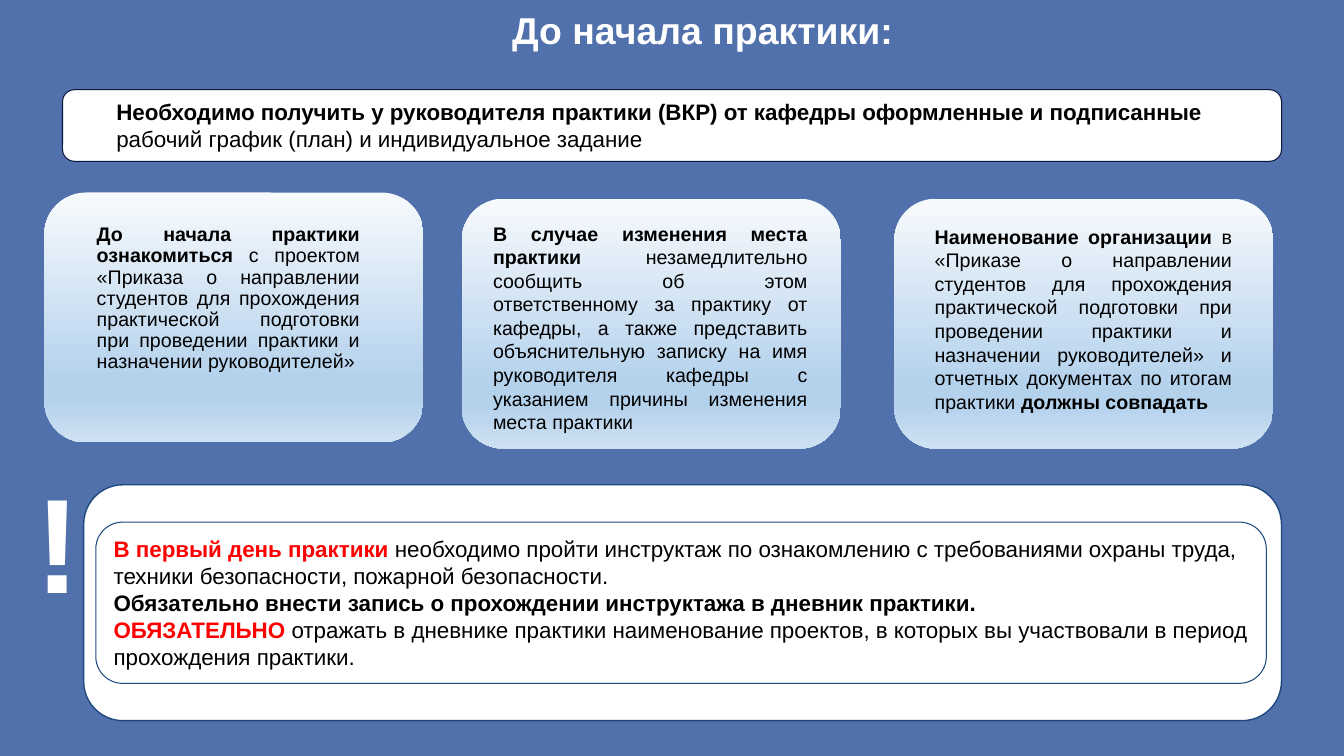
import pptx
import pptx.util
import pptx.dml.color
import pptx.enum.shapes
import pptx.enum.text
import pptx.oxml

PX = 9144  # EMU per px, 100 px to the inch
FONT = "Arial"
COLORS = {
    "back": "5171AC", "white": "FFFFFF", "black": "000000", "red": "FF0000",
    "navy": "0C153C", "blue": "1F497D",
}
CARD_STOPS = [(0, "F7FAFD"), (74, "B5D2EC"), (83, "B5D2EC"), (100, "CEE1F2")]
ALIGN = pptx.enum.text.PP_ALIGN
ANCHOR = pptx.enum.text.MSO_ANCHOR


def rgb(name):
    return pptx.dml.color.RGBColor.from_string(COLORS[name])


def px(*values):
    return [pptx.util.Emu(v * PX) for v in values]


def write(tf, paragraphs, size, align=ALIGN.LEFT, anchor=ANCHOR.TOP,
          inset=None, spacing=None, before=0, indent=0, wrap=True):
    """Each paragraph is a list of (text, colour name, bold) runs."""
    tf.word_wrap = wrap
    tf.auto_size = pptx.enum.text.MSO_AUTO_SIZE.NONE
    tf.vertical_anchor = anchor
    if inset is not None:
        (tf.margin_left, tf.margin_top,
         tf.margin_right, tf.margin_bottom) = px(*[inset] * 4)
    for i, runs in enumerate(paragraphs):
        p = tf.add_paragraph() if i else tf.paragraphs[0]
        p.alignment = align
        p.space_before = pptx.util.Pt(before)
        if spacing:
            p.line_spacing = spacing
        if indent:
            p.level = 1
            pPr = p._p.get_or_add_pPr()
            pPr.set("marL", str(indent * PX))
            pPr.set("indent", "0")
        for text, color, bold in runs:
            r = p.add_run()
            r.text = text
            r.font.name = FONT
            r.font.size = pptx.util.Pt(size)
            r.font.bold = bold
            r.font.color.rgb = rgb(color)


def add_box(s, box, fill=None, line=None, width=0.75):
    sp = s.shapes.add_shape(
        pptx.enum.shapes.MSO_SHAPE.ROUNDED_RECTANGLE, *px(*box))
    sp.shadow.inherit = False
    if fill:
        sp.fill.solid()
        sp.fill.fore_color.rgb = rgb(fill)
    else:
        sp.fill.background()
    if line:
        sp.line.color.rgb = rgb(line)
        sp.line.width = pptx.util.Pt(width)
    else:
        sp.line.fill.background()
    return sp


def add_card(s, left, top):
    sp = add_box(s, (left, top, 376, 248))
    sp.fill.gradient()
    sp.fill.gradient_angle = 270  # counter-clockwise: top to bottom
    stops = sp._element.spPr.find(".//" + pptx.oxml.ns.qn("a:gsLst"))
    for gs in list(stops):
        stops.remove(gs)
    for pos, color in CARD_STOPS:
        stops.append(pptx.oxml.parse_xml(
            f'<a:gs {pptx.oxml.ns.nsdecls("a")} pos="{pos * 1000}">'
            f'<a:srgbClr val="{color}"/></a:gs>'))


def add_text(s, box, paragraphs, size, **style):
    sp = s.shapes.add_textbox(*px(*box))
    write(sp.text_frame, paragraphs, size, **style)


def main():
    prs = pptx.Presentation()
    prs.slide_width, prs.slide_height = px(1333, 750)
    s = prs.slides.add_slide(prs.slide_layouts[5])
    s.background.fill.solid()
    s.background.fill.fore_color.rgb = rgb("back")

    # Title
    title = s.shapes.title
    title.left, title.top, title.width, title.height = px(102, -1, 1190, 121)
    write(title.text_frame, [[("До начала практики:", "white", True)]], 26.7,
          align=ALIGN.CENTER, inset=13, spacing=0.9, before=7.5)

    # Documents to obtain
    sp = add_box(s, (62, 89, 1209, 71), "white", "navy")
    write(sp.text_frame, [
        [("Необходимо получить у руководителя практики (ВКР) от кафедры "
          "оформленные и подписанные", "black", True)],
        [("рабочий график (план) и индивидуальное задание", "black", False)],
    ], 16, anchor=ANCHOR.MIDDLE, indent=40)

    # Three cards: card position, text box, line spacing, runs
    cards = [
        ((44, 191), (83, 210, 287, 201), 0.9, [
            ("До начала практики ознакомиться ", "black", True),
            ("с проектом «Приказа о направлении студентов для прохождения "
             "практической подготовки при проведении практики и назначении "
             "руководителей»", "black", False)]),
        ((458, 197), (476, 207, 338, 216), None, [
            ("В случае изменения места практики ", "black", True),
            ("незамедлительно сообщить об этом ответственному за практику от "
             "кафедры, а также представить объяснительную записку на имя "
             "руководителя кафедры с указанием причины изменения места "
             "практики", "black", False)]),
        ((887, 197), (914, 210, 321, 201), None, [
            ("Наименование организации ", "black", True),
            ("в «Приказе о направлении студентов для прохождения практической "
             "подготовки при проведении практики и назначении руководителей» "
             "и отчетных документах по итогам практики ", "black", False),
            ("должны совпадать ", "black", True)]),
    ]
    for corner, box, spacing, runs in cards:
        add_card(s, *corner)
        add_text(s, box, [runs], 14, align=ALIGN.JUSTIFY, inset=13,
                 spacing=spacing)

    # First-day rules
    add_box(s, (83, 481, 1188, 234), "white", "blue", 1)
    sp = add_box(s, (95, 518, 1161, 160), line="blue")
    write(sp.text_frame, [
        [("В первый день практики ", "red", True),
         ("необходимо пройти инструктаж по ознакомлению с требованиями охраны "
          "труда, техники безопасности, пожарной безопасности.",
          "black", False)],
        [("Обязательно внести запись о прохождении инструктажа в дневник "
          "практики.", "black", True)],
        [("ОБЯЗАТЕЛЬНО", "red", True),
         (" отражать в дневнике практики наименование проектов, в которых вы "
          "участвовали в период прохождения практики.", "black", False)],
    ], 16, anchor=ANCHOR.MIDDLE)
    add_text(s, (25, 451, 69, 172), [[("!", "white", True)]], 96)

    prs.save("out.pptx")


if __name__ == "__main__":
    main()
